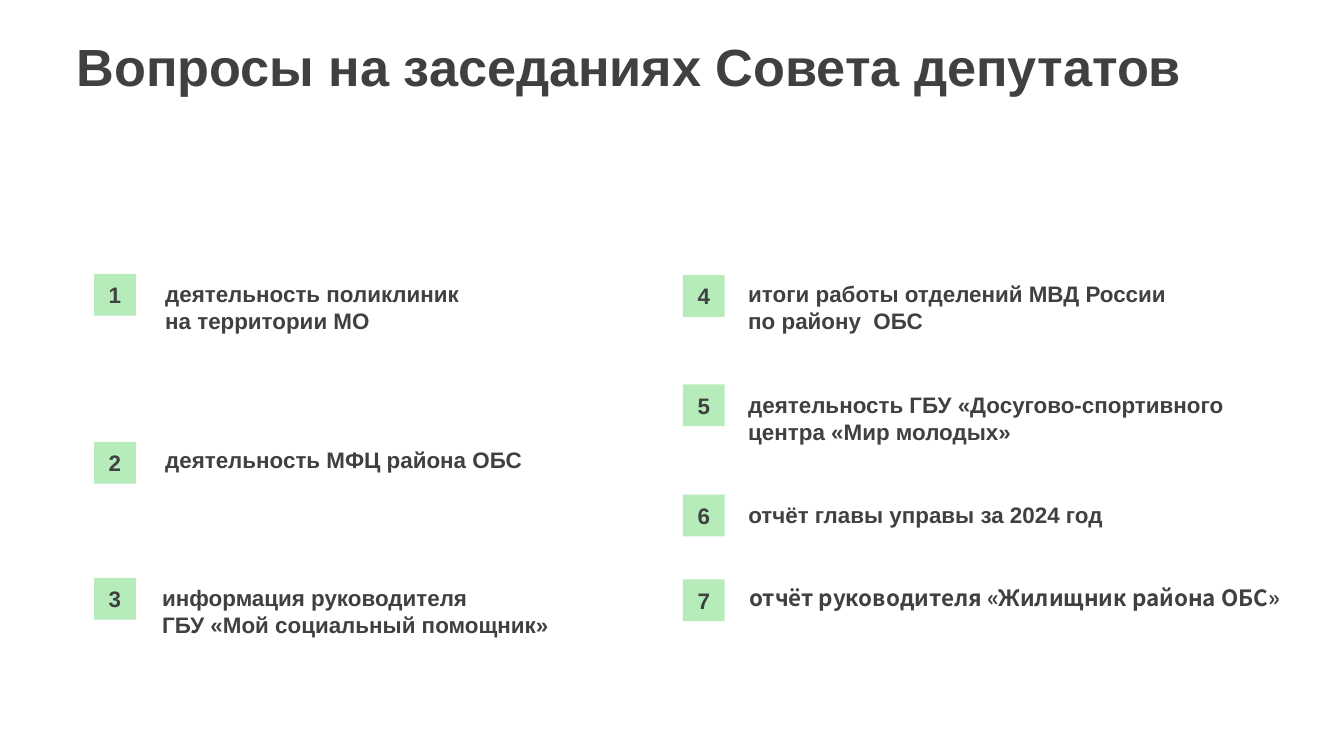
from dataclasses import dataclass

from pptx import Presentation
from pptx.dml.color import RGBColor
from pptx.enum import shapes, text
from pptx.util import Pt


@dataclass(frozen=True)
class Theme:
    ink: RGBColor = RGBColor(0x40, 0x40, 0x40)
    badge: RGBColor = RGBColor(0xB6, 0xEC, 0xBA)
    font: str = "Arial"
    alt_font: str = "Noto Sans CJK KR"
    title_size: float = 28
    body_size: float = 12


@dataclass(frozen=True)
class Topic:
    label: str
    badge_top: float
    text_left: float
    text_top: float
    width: float
    height: float = 36
    font: str = Theme.font


THEME = Theme()
BADGE = 22.4
LEFT_BADGE, RIGHT_BADGE = 50.4, 365.8
LEFT_TEXT, RIGHT_TEXT = 81.4, 393.8

LEFT_TOPICS = [
    Topic("деятельность поликлиник\nна территории МО", 146.8, LEFT_TEXT, 146.8, 290),
    Topic("деятельность МФЦ района ОБС", 236.8, LEFT_TEXT, 235.6, 240, 21.8),
    Topic("информация руководителя\nГБУ «Мой социальный помощник»",
          309.6, 79.8, 309.6, 234),
]
RIGHT_TOPICS = [
    Topic("итоги работы отделений МВД России по району  ОБС",
          147.4, RIGHT_TEXT, 146.8, 244),
    Topic("деятельность ГБУ «Досугово-спортивного центра «Мир молодых»",
          205.9, RIGHT_TEXT, 205.9, 272),
    Topic("отчёт главы управы за 2024 год", 265, RIGHT_TEXT, 265, 320, 21.8),
    Topic("отчёт руководителя «Жилищник района ОБС»",
          310.4, 394.4, 309.6, 320, 21.8, THEME.alt_font),
]


def style(tf: text, size: float, font: str = THEME.font) -> None:
    for p in tf.paragraphs:
        for r in p.runs:
            r.font.name = font
            r.font.size = Pt(size)
            r.font.bold = True
            r.font.color.rgb = THEME.ink


def add_title(s, label: str) -> None:
    sp = s.shapes.title
    sp.left, sp.top, sp.width, sp.height = Pt(33.8), Pt(0), Pt(686.2), Pt(69.8)
    tf = sp.text_frame
    tf.text = label
    tf.vertical_anchor = text.MSO_ANCHOR.MIDDLE
    tf.paragraphs[0].alignment = text.PP_ALIGN.LEFT
    style(tf, THEME.title_size)


def add_badge(s, number: int, left: float, top: float) -> None:
    sp = s.shapes.add_shape(shapes.MSO_SHAPE.RECTANGLE,
                            Pt(left), Pt(top), Pt(BADGE), Pt(BADGE))
    sp.shadow.inherit = False
    sp.fill.solid()
    sp.fill.fore_color.rgb = THEME.badge
    sp.line.fill.background()
    tf = sp.text_frame
    tf.margin_left = tf.margin_right = tf.margin_top = tf.margin_bottom = Pt(0)
    tf.vertical_anchor = text.MSO_ANCHOR.MIDDLE
    tf.text = str(number)
    tf.paragraphs[0].alignment = text.PP_ALIGN.CENTER
    style(tf, THEME.body_size)


def add_topic(s, number: int, badge_left: float, topic: Topic) -> None:
    add_badge(s, number, badge_left, topic.badge_top)
    tf = s.shapes.add_textbox(Pt(topic.text_left), Pt(topic.text_top),
                              Pt(topic.width), Pt(topic.height)).text_frame
    tf.word_wrap = True
    tf.auto_size = text.MSO_AUTO_SIZE.SHAPE_TO_FIT_TEXT
    tf.text = topic.label
    style(tf, THEME.body_size, topic.font)


def main() -> None:
    prs = Presentation()
    prs.slide_width, prs.slide_height = Pt(720), Pt(405)
    s = prs.slides.add_slide(prs.slide_layouts[5])
    add_title(s, "Вопросы на заседаниях Совета депутатов")
    number = 1
    for badge_left, topics in ((LEFT_BADGE, LEFT_TOPICS), (RIGHT_BADGE, RIGHT_TOPICS)):
        for number, topic in enumerate(topics, number):
            add_topic(s, number, badge_left, topic)
        number += 1
    prs.save("out.pptx")


if __name__ == "__main__":
    main()
